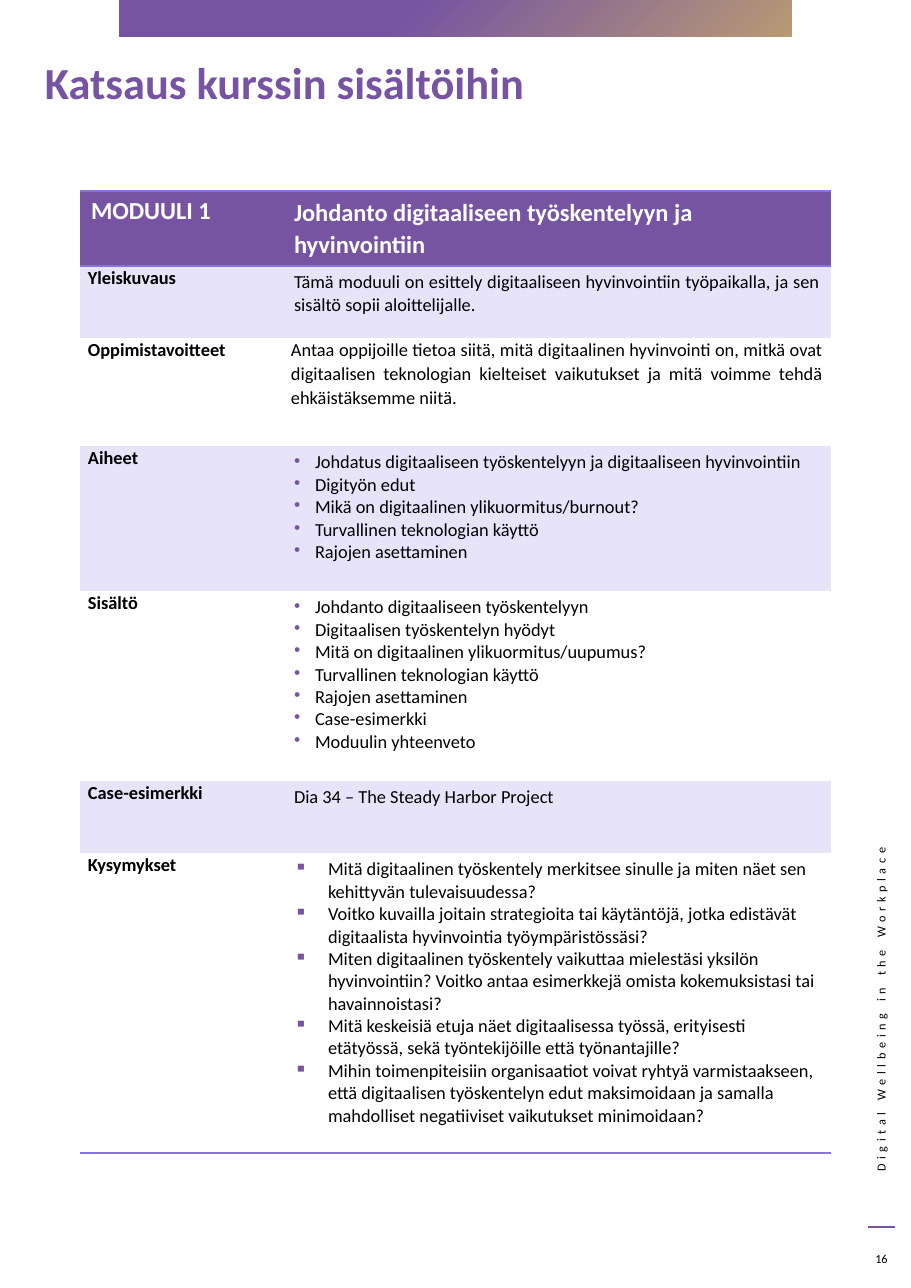
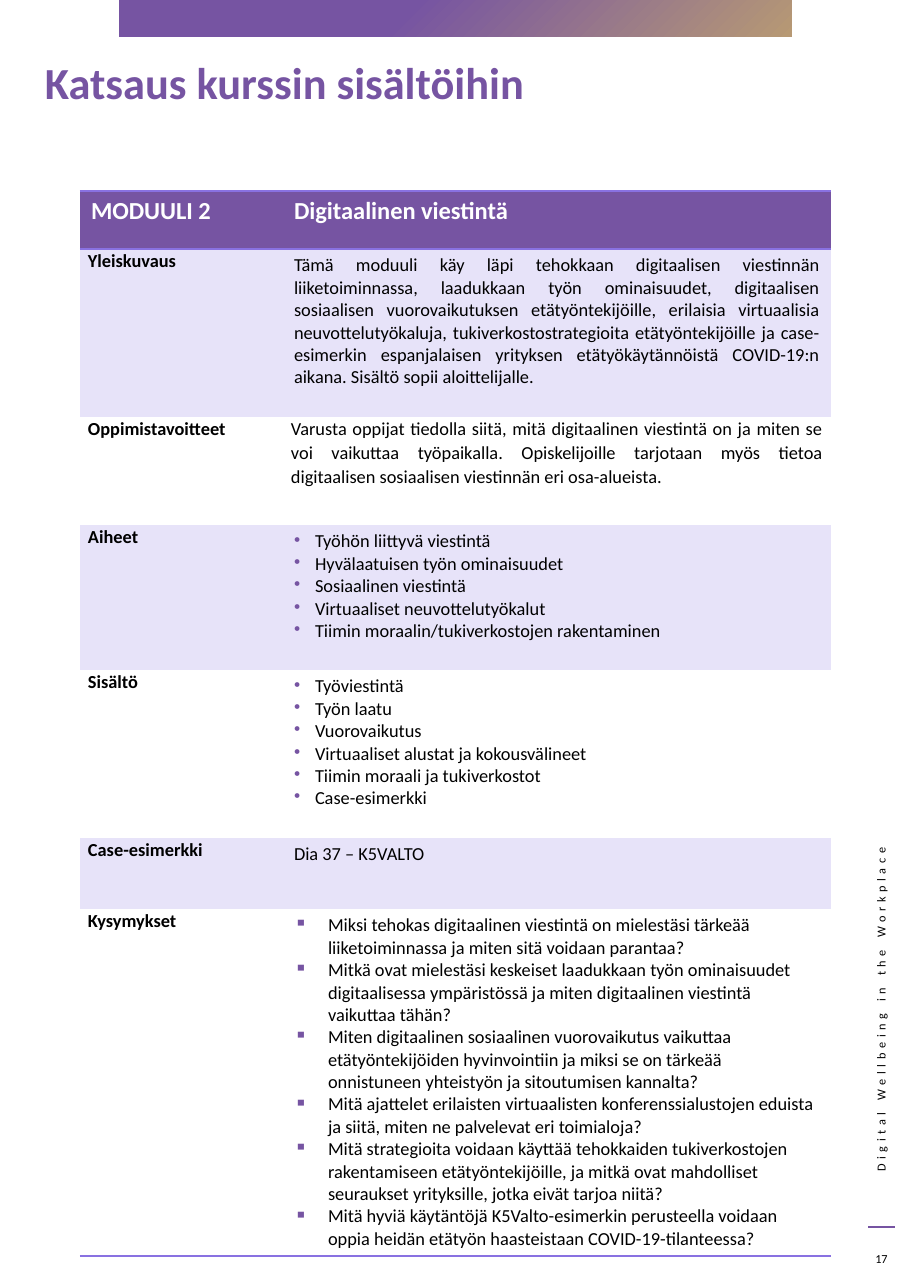
from lxml.etree import SubElement
from pptx import Presentation
from pptx.dml.color import RGBColor
from pptx.enum.shapes import MSO_CONNECTOR, MSO_SHAPE
from pptx.enum.text import MSO_ANCHOR, PP_ALIGN
from pptx.oxml import parse_xml
from pptx.oxml.ns import nsdecls, qn
from pptx.util import Pt

PX = 8298  # EMU in one px
WIDE, HIGH = 911, 1288

PURPLE = RGBColor(0x76, 0x54, 0xA2)
GOLD = RGBColor(0xB7, 0x99, 0x74)
VIOLET = RGBColor(0x89, 0x71, 0xE1)
LILAC = RGBColor(0xE7, 0xE3, 0xF9)
WHITE = RGBColor(0xFF, 0xFF, 0xFF)
BLACK = RGBColor(0, 0, 0)

FONT = "Calibri"
TITLE = "Katsaus kurssin sisältöihin"
COURSE = "Digital Wellbeing in the Workplace"
PLAIN_GRID = "{2D5ABB26-0587-4C30-8999-92F81FD0307C}"
LABELS = ["Yleiskuvaus", "Oppimistavoitteet", "Aiheet", "Sisältö",
          "Case-esimerkki", "Kysymykset"]
BULLETS = {"Aiheet": ("•", 21), "Sisältö": ("•", 21), "Kysymykset": ("▪", 34)}

# One entry a slide: page, row heights, header spacing, header cells, body cells
PAGES = [
    (16, [75, 72, 108, 145, 190, 72, 300], 1.07,
     ["MODUULI 1", "Johdanto digitaaliseen työskentelyyn ja hyvinvointiin"],
     [["Tämä moduuli on esittely digitaaliseen hyvinvointiin työpaikalla, ja "
       "sen sisältö sopii aloittelijalle."],
      ["Antaa oppijoille tietoa siitä, mitä digitaalinen hyvinvointi on, mitkä "
       "ovat digitaalisen teknologian kielteiset vaikutukset ja mitä voimme "
       "tehdä ehkäistäksemme niitä."],
      ["Johdatus digitaaliseen työskentelyyn ja digitaaliseen hyvinvointiin",
       "Digityön edut",
       "Mikä on digitaalinen ylikuormitus/burnout?",
       "Turvallinen teknologian käyttö",
       "Rajojen asettaminen"],
      ["Johdanto digitaaliseen työskentelyyn",
       "Digitaalisen työskentelyn hyödyt",
       "Mitä on digitaalinen ylikuormitus/uupumus?",
       "Turvallinen teknologian käyttö",
       "Rajojen asettaminen",
       "Case-esimerkki",
       "Moduulin yhteenveto"],
      ["Dia 34 – The Steady Harbor Project"],
      ["Mitä digitaalinen työskentely merkitsee sinulle ja miten näet sen "
       "kehittyvän tulevaisuudessa?",
       "Voitko kuvailla joitain strategioita tai käytäntöjä, jotka edistävät "
       "digitaalista hyvinvointia työympäristössäsi?",
       "Miten digitaalinen työskentely vaikuttaa mielestäsi yksilön "
       "hyvinvointiin? Voitko antaa esimerkkejä omista kokemuksistasi tai "
       "havainnoistasi?",
       "Mitä keskeisiä etuja näet digitaalisessa työssä, erityisesti "
       "etätyössä, sekä työntekijöille että työnantajille?",
       "Mihin toimenpiteisiin organisaatiot voivat ryhtyä varmistaakseen, "
       "että digitaalisen työskentelyn edut maksimoidaan ja samalla "
       "mahdolliset negatiiviset vaikutukset minimoidaan?"]]),
    (17, [58, 168, 108, 145, 168, 71, 347], None,
     ["MODUULI 2", "Digitaalinen viestintä"],
     [["Tämä moduuli käy läpi tehokkaan digitaalisen viestinnän "
       "liiketoiminnassa, laadukkaan työn ominaisuudet, digitaalisen "
       "sosiaalisen vuorovaikutuksen etätyöntekijöille, erilaisia "
       "virtuaalisia neuvottelutyökaluja, tukiverkostostrategioita "
       "etätyöntekijöille ja case-esimerkin espanjalaisen yrityksen "
       "etätyökäytännöistä COVID-19:n aikana. Sisältö sopii aloittelijalle."],
      ["Varusta oppijat tiedolla siitä, mitä digitaalinen viestintä on ja "
       "miten se voi vaikuttaa työpaikalla. Opiskelijoille tarjotaan myös "
       "tietoa digitaalisen sosiaalisen viestinnän eri osa-alueista."],
      ["Työhön liittyvä viestintä",
       "Hyvälaatuisen työn ominaisuudet",
       "Sosiaalinen viestintä",
       "Virtuaaliset neuvottelutyökalut",
       "Tiimin moraalin/tukiverkostojen rakentaminen"],
      ["Työviestintä",
       "Työn laatu",
       "Vuorovaikutus",
       "Virtuaaliset alustat ja kokousvälineet",
       "Tiimin moraali ja tukiverkostot",
       "Case-esimerkki"],
      ["Dia 37 – K5VALTO"],
      ["Miksi tehokas digitaalinen viestintä on mielestäsi tärkeää "
       "liiketoiminnassa ja miten sitä voidaan parantaa?",
       "Mitkä ovat mielestäsi keskeiset laadukkaan työn ominaisuudet "
       "digitaalisessa ympäristössä ja miten digitaalinen viestintä "
       "vaikuttaa tähän?",
       "Miten digitaalinen sosiaalinen vuorovaikutus vaikuttaa "
       "etätyöntekijöiden hyvinvointiin ja miksi se on tärkeää onnistuneen "
       "yhteistyön ja sitoutumisen kannalta?",
       "Mitä ajattelet erilaisten virtuaalisten konferenssialustojen eduista "
       "ja siitä, miten ne palvelevat eri toimialoja?",
       "Mitä strategioita voidaan käyttää tehokkaiden tukiverkostojen "
       "rakentamiseen etätyöntekijöille, ja mitkä ovat mahdolliset "
       "seuraukset yrityksille, jotka eivät tarjoa niitä?",
       "Mitä hyviä käytäntöjä K5Valto-esimerkin perusteella voidaan oppia "
       "heidän etätyön haasteistaan COVID-19-tilanteessa?"]]),
]


def write(frame, lines, size, color=BLACK, bold=False, align=PP_ALIGN.LEFT,
          lead=None, after=None, bullet=None):
    """Fill a text frame, one paragraph a line."""
    frame.word_wrap = True
    for i, line in enumerate(lines):
        para = frame.add_paragraph() if i else frame.paragraphs[0]
        para.text = line
        para.alignment = align
        para.line_spacing = lead
        para.space_after = after
        if bullet:
            mark, indent = bullet
            props = para._p.get_or_add_pPr()
            props.set("marL", str(indent * PX))
            props.set("indent", str(-indent * PX))
            tint = SubElement(props, qn("a:buClr"))
            SubElement(tint, qn("a:srgbClr")).set("val", str(PURPLE))
            SubElement(props, qn("a:buChar")).set("char", mark)
        font = para.font
        font.name, font.size, font.bold = FONT, Pt(size), bold
        font.color.rgb = color


def place(*box):
    """Turn px lengths into EMU."""
    return [n * PX for n in box]


deck = Presentation()
deck.slide_width, deck.slide_height = place(WIDE, HIGH)

for page, heights, lead, header, body in PAGES:
    slide = deck.slides.add_slide(deck.slide_layouts[6])
    shapes = slide.shapes

    # Course name up the right edge
    side = shapes.add_textbox(*place(690, 1015, 382, 26))
    side.rotation = 270
    write(side.text_frame, [COURSE], 8, align=PP_ALIGN.RIGHT)
    run = side.text_frame.paragraphs[0].runs[0]
    run._r.get_or_add_rPr().set("spc", "300")

    # Short rule above the page number
    rule = shapes.add_connector(MSO_CONNECTOR.STRAIGHT,
                                *place(895, 1227, 868, 1227))
    rule.line.color.rgb = PURPLE
    rule.line.width = Pt(0.75)
    SubElement(rule._element.spPr, qn("a:effectLst"))

    # Gradient band, spreading from the lower right corner
    band = shapes.add_shape(MSO_SHAPE.RECTANGLE, *place(119, 0, 673, 37))
    band.shadow.inherit = False
    band.line.fill.background()
    band.fill.gradient()
    for stop, (color, spot) in zip(band.fill.gradient_stops,
                                   [(GOLD, 0), (PURPLE, 0.58)]):
        stop.color.rgb = color
        stop.position = spot
    grad = band._element.spPr.find(qn("a:gradFill"))
    grad.replace(grad.find(qn("a:lin")), parse_xml(
        f'<a:path {nsdecls("a")} path="circle">'
        '<a:fillToRect l="100000" t="100000"/></a:path>'))

    # Title and page number
    title = shapes.add_textbox(*place(34, 50, 784, 89))
    write(title.text_frame, [TITLE], 29, PURPLE, True)
    number = shapes.add_textbox(*place(860, 1243, 43, 32))
    number.text_frame.vertical_anchor = MSO_ANCHOR.MIDDLE
    write(number.text_frame, [str(page)], 8, align=PP_ALIGN.CENTER)

    # Module table
    grid = shapes.add_table(len(heights), 2,
                            *place(80, 191, 751, sum(heights))).table
    grid.first_row = grid.horz_banding = False
    grid._tbl.tblPr.find(qn("a:tableStyleId")).text = PLAIN_GRID
    for col, width in zip(grid.columns, place(203, 548)):
        col.width = width
    for row, height in zip(grid.rows, place(*heights)):
        row.height = height

    # Header row
    write(grid.cell(0, 0).text_frame, header[:1], 16, WHITE, True)
    write(grid.cell(0, 1).text_frame, header[1:], 16, WHITE, True, lead=lead)

    # Body rows
    for r, (label, lines) in enumerate(zip(LABELS, body), 1):
        name, text = grid.cell(r, 0), grid.cell(r, 1)
        goals = label == "Oppimistavoitteet"
        for cell in [name, text] if goals else [name]:
            cell.margin_left = cell.margin_right = 8 * PX
            cell.margin_top = cell.margin_bottom = 0
        write(name.text_frame, [label], 12, bold=True, lead=1.07, after=Pt(8))
        just = goals or label == "Yleiskuvaus"
        write(text.text_frame, lines, 12,
              align=PP_ALIGN.JUSTIFY if just else PP_ALIGN.LEFT,
              lead=1.07 if goals else None, after=Pt(8) if goals else None,
              bullet=BULLETS.get(label))

    # Fills and borders
    last = len(heights) - 1
    edges = {0: ["lnB", "lnT"], last: ["lnB"]}
    for r in range(len(heights)):
        for c in range(2):
            cell = grid.cell(r, c)
            if r % 2 or r == 0:
                cell.fill.solid()
                cell.fill.fore_color.rgb = LILAC if r else PURPLE
            else:
                cell.fill.background()
            for edge in edges.get(r, []):
                cell._tc.get_or_add_tcPr().insert(0, parse_xml(
                    f'<a:{edge} {nsdecls("a")} w="12700"><a:solidFill>'
                    f'<a:srgbClr val="{VIOLET}"/></a:solidFill></a:{edge}>'))

deck.save("out.pptx")
